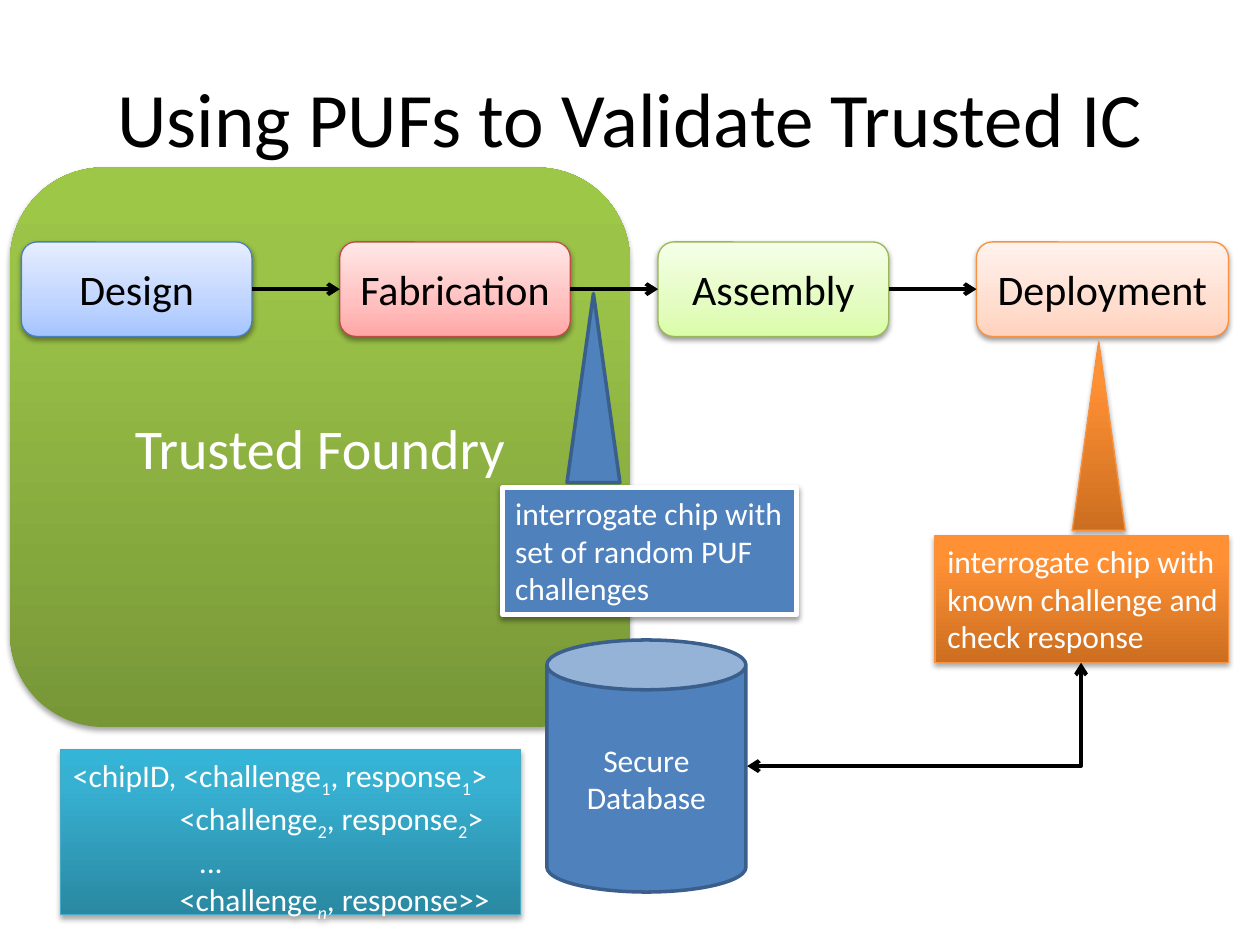
import itertools
from dataclasses import dataclass

import pptx
import pptx.dml.color
import pptx.enum.dml
import pptx.enum.shapes
import pptx.enum.text
import pptx.oxml
import pptx.oxml.ns
import pptx.util

PX = 9144  # EMU per px, 100 px to the inch
SHAPE = pptx.enum.shapes.MSO_SHAPE
CONNECTOR = pptx.enum.shapes.MSO_CONNECTOR
ALIGN = pptx.enum.text.PP_ALIGN
ANCHOR = pptx.enum.text.MSO_ANCHOR
qn = pptx.oxml.ns.qn


@dataclass(frozen=True)
class Paint:
    """Fill stops from bottom to top, outline, and shadow (opacity %, distance pt)."""
    stops: tuple
    line: str = None
    weight: float = 0.75
    shadow: tuple = None


SOFT, STRONG = (38, 1.6), (35, 1.8)


class Theme:
    font = "Calibri"
    title, foundry, stage, body = 44, 32, 24, 18
    black, white = "000000", "FFFFFF"
    arrow = 2.25
    green = Paint(((0, "779737"), (80, "9BC348"), (100, "9DC746")), shadow=STRONG)
    teal = Paint(((0, "2A88A2"), (80, "37B1D2"), (100, "34B4D6")), "46AAC5", shadow=STRONG)
    orange = Paint(((0, "CC6E20"), (80, "FF9034"), (100, "FF9136")), "F69240", shadow=STRONG)
    blue = Paint(((0, "4F81BD"),), "3A5F8C", 2)
    blue_note = Paint(((0, "4F81BD"),), white, 3, SOFT)
    design = Paint(((0, "A4C4FF"), (35, "BFD4FF"), (100, "E6EEFF")), "4B7EBC", shadow=SOFT)
    fabrication = Paint(((0, "FFA6A5"), (35, "FFC0BF"), (100, "FFE7E7")), "BF4C48", shadow=SOFT)
    assembly = Paint(((0, "DAFDA7"), (35, "E4FCC2"), (100, "F5FFE7")), "98B955", shadow=SOFT)
    deployment = Paint(((0, "FFD2BD"), (35, "FFDED0"), (100, "FFF2ED")), "F69240", shadow=SOFT)


def rgb(color):
    return pptx.dml.color.RGBColor.from_string(color)


def emu(*lengths):
    return [round(n * PX) for n in lengths]


def add_child(parent, tag, **attrs):
    child = parent.makeelement(qn(tag), {k: str(v) for k, v in attrs.items()})
    parent.append(child)
    return child


def paint_fill(sp, stops):
    if len(stops) == 1:
        sp.fill.solid()
        sp.fill.fore_color.rgb = rgb(stops[0][1])
        return
    sp.fill.gradient()
    sp.fill.gradient_angle = 90
    gs_list = next(sp._element.spPr.iter(qn("a:gsLst")))
    for gs in list(gs_list):
        gs_list.remove(gs)
    for position, color in stops:
        gs = add_child(gs_list, "a:gs", pos=position * 1000)
        add_child(gs, "a:srgbClr", val=color)


def paint_shadow(sp, opacity, distance):
    effects = sp._element.spPr.find(qn("a:effectLst"))
    shadow = add_child(effects, "a:outerShdw", blurRad=pptx.util.Pt(3.1),
                       dist=pptx.util.Pt(distance), dir=5400000, rotWithShape=0)
    color = add_child(shadow, "a:srgbClr", val=Theme.black)
    add_child(color, "a:alpha", val=opacity * 1000)


def add_block(s, kind, box, paint):
    sp = s.shapes.add_shape(kind, *emu(*box))
    paint_fill(sp, paint.stops)
    if paint.line:
        sp.line.color.rgb = rgb(paint.line)
        sp.line.width = pptx.util.Pt(paint.weight)
    else:
        sp.line.fill.background()
    sp.shadow.inherit = False
    if paint.shadow:
        paint_shadow(sp, *paint.shadow)
    return sp


def add_run(p, text, size, color):
    r = p.add_run()
    r.text = text
    r.font.name = Theme.font
    r.font.size = pptx.util.Pt(size)
    r.font.color.rgb = rgb(color)
    return r


def write(sp, text, size, color=Theme.white, align=ALIGN.CENTER, anchor=ANCHOR.MIDDLE):
    tf = sp.text_frame
    tf.word_wrap = True
    tf.vertical_anchor = anchor
    p = tf.paragraphs[0]
    p.alignment = align
    add_run(p, text, size, color)


def add_arrow(s, kind, start, end, ends=("a:tailEnd",)):
    cx = s.shapes.add_connector(kind, *emu(*start, *end))
    cx.line.color.rgb = rgb(Theme.black)
    cx.line.width = pptx.util.Pt(Theme.arrow)
    for tag in ends:
        add_child(cx.line._get_or_add_ln(), tag, type="arrow")
    add_child(cx._element.spPr, "a:effectLst")
    return cx


def add_title(s, box, text):
    title = s.shapes.title
    title.left, title.top, title.width, title.height = emu(*box)
    write(title, text, Theme.title, Theme.black)


def add_foundry(s, box):
    sp = add_block(s, SHAPE.ROUNDED_RECTANGLE, box, Theme.green)
    write(sp, "Trusted Foundry", Theme.foundry)
    s.shapes.title._element.addprevious(sp._element)


def add_flow(s, box):
    x, y, w, h = box
    stages = [("Design", 183, Theme.design), ("Fabrication", 183, Theme.fabrication),
              ("Assembly", 183, Theme.assembly), ("Deployment", 200, Theme.deployment)]
    pitch = (w - stages[-1][1]) / (len(stages) - 1)
    blocks = []
    for i, (name, width, paint) in enumerate(stages):
        sp = add_block(s, SHAPE.ROUNDED_RECTANGLE, (x + i * pitch, y, width, h), paint)
        write(sp, name, Theme.stage, Theme.black)
        blocks.append(sp)
    for left, right in itertools.pairwise(blocks):
        cx = add_arrow(s, CONNECTOR.STRAIGHT, (x, y), (x + w, y))
        cx.begin_connect(left, 3)
        cx.end_connect(right, 1)


def add_callout(s, box, pointer_x, text, pointer_paint, note_paint):
    """A note at the foot of the box, with a pointer rising above it."""
    x, y, w, h = box
    note_h = 101
    add_block(s, SHAPE.ISOSCELES_TRIANGLE, (x + pointer_x, y, 42, h - note_h - 4), pointer_paint)
    note = add_block(s, SHAPE.RECTANGLE, (x, y + h - note_h, w, note_h), note_paint)
    write(note, text, Theme.body, align=ALIGN.LEFT, anchor=ANCHOR.TOP)
    note.text_frame.margin_right = 8 * PX


def add_database(s, box):
    write(add_block(s, SHAPE.CAN, box, Theme.blue), "Secure Database", Theme.body)


def add_record(s, box):
    """Challenge and response pairs; each line is an indent and (text, subscript) pairs."""
    lines = [(0, [("<chipID, <challenge", "1"), (", response", "1"), (">", "")]),
             (85, [("<challenge", "2"), (", response", "2"), (">", "")]),
             (100, [("...", "")]),
             (85, [("<challenge", "n"), (", response>>", "")])]
    sp = add_block(s, SHAPE.RECTANGLE, box, Theme.teal)
    tf = sp.text_frame
    tf.word_wrap = True
    tf.vertical_anchor = ANCHOR.TOP
    for i, (indent, parts) in enumerate(lines):
        p = tf.add_paragraph() if i else tf.paragraphs[0]
        p.alignment = ALIGN.LEFT
        p._p.get_or_add_pPr().set("marL", str(indent * PX))
        for text, subscript in parts:
            add_run(p, text, Theme.body, Theme.white)
            if subscript:
                r = add_run(p, subscript, Theme.body, Theme.white)
                r.font.italic = subscript == "n"
                r._r.get_or_add_rPr().set("baseline", "-25000")


def add_lookup_arrow(s, box):
    """Two-headed elbow from the box's top right, down, then to its bottom left."""
    x, y, w, h = box
    cx = add_arrow(s, CONNECTOR.ELBOW, (x, y), (x + w, y + h), ("a:headEnd", "a:tailEnd"))
    cx._element.spPr.find(qn("a:prstGeom")).set("prst", "bentConnector2")
    # A quarter turn about the centre swaps width and height.
    cx.left, cx.top, cx.width, cx.height = emu(x + (w - h) / 2, y + (h - w) / 2, h, w)
    cx._element.spPr.find(qn("a:xfrm")).set("rot", "5400000")


def main():
    prs = pptx.Presentation()
    prs.slide_width, prs.slide_height = emu(1000, 750)
    s = prs.slides.add_slide(prs.slide_layouts[5])
    add_title(s, (50, 30, 900, 125), "Using PUFs to Validate Trusted IC")
    add_foundry(s, (8, 133, 492, 444))
    add_flow(s, (17, 192, 958, 75))
    add_callout(s, (399, 233, 233, 255), 51,
                "interrogate chip with set of random PUF challenges", Theme.blue, Theme.blue_note)
    add_database(s, (434, 508, 158, 200))
    add_record(s, (48, 595, 365, 131))
    add_callout(s, (742, 271, 233, 255), 109,
                "interrogate chip with known challenge and check response",
                Theme.orange, Theme.orange)
    add_lookup_arrow(s, (593, 526, 265, 82))
    prs.save("out.pptx")


if __name__ == "__main__":
    main()
